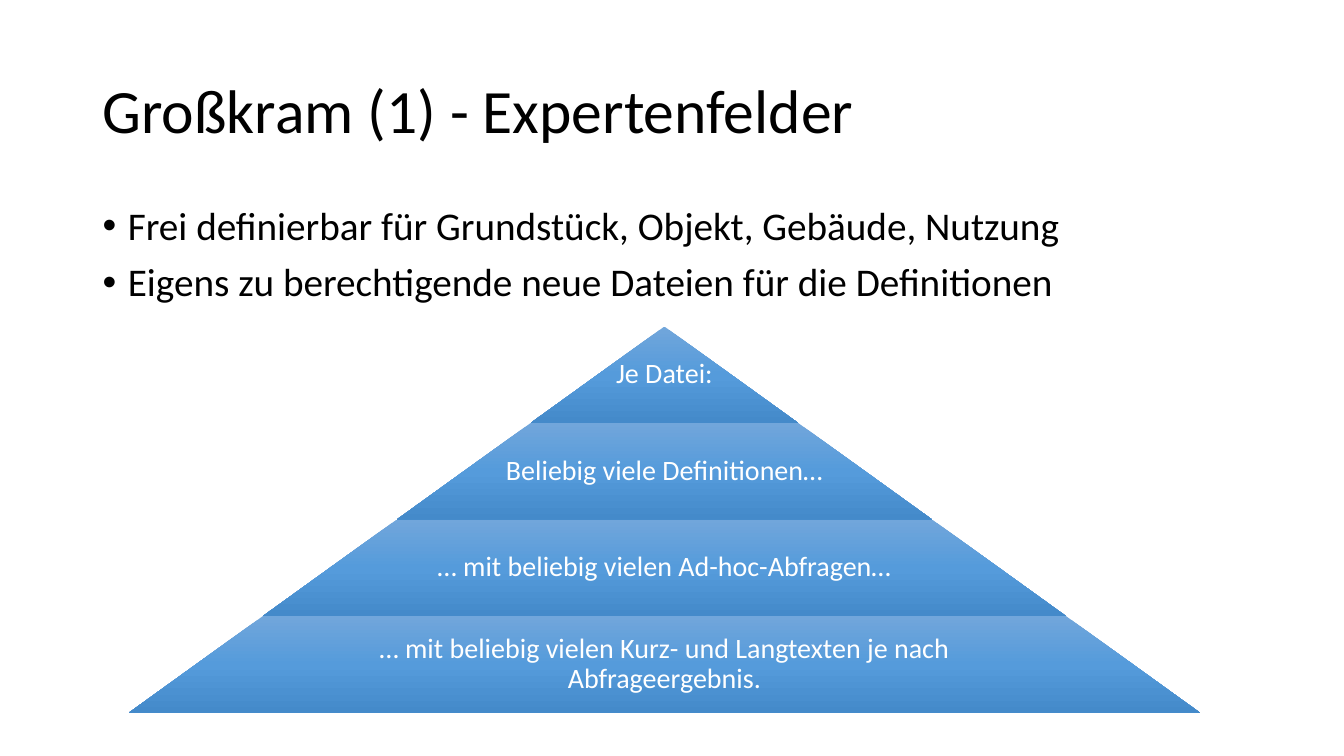
"""Build the slide on expert fields with a four-level pyramid."""
import copy

import pptx
import pptx.dml.color
import pptx.enum.shapes
import pptx.enum.text
import pptx.oxml
import pptx.oxml.ns
import pptx.util

TITLE = "Großkram (1) - Expertenfelder"
BULLETS = [
    "Frei definierbar für Grundstück, Objekt, Gebäude, Nutzung",
    "Eigens zu berechtigende neue Dateien für die Definitionen",
]
LEVELS = [
    "Je Datei:",
    "Beliebig viele Definitionen…",
    "… mit beliebig vielen Ad-hoc-Abfragen…",
    "… mit beliebig vielen Kurz- und Langtexten je nach Abfrageergebnis.",
]
COLORS = {"text": "000000", "label": "FFFFFF",
          "light": "71A6DB", "middle": "559BDB", "dark": "448ACA"}
GRADIENT = [(0, "light"), (0.5, "middle"), (1, "dark")]

PX = 9144
SLIDE_SIZE = (1333, 750)
TITLE_BOX = (92, 40, 1150, 145)
BODY_BOX = (92, 200, 1150, 476)
PYRAMID = {"center": 659, "top": 324, "width": 1062, "height": 383}
LABEL_SHARE = 0.65
LABEL_INSET = 3
BULLET_INDENT = 25

ANCHOR = pptx.enum.text.MSO_ANCHOR
ALIGN = pptx.enum.text.PP_ALIGN


def rgb(name):
    return pptx.dml.color.RGBColor.from_string(COLORS[name])


def emu(box):
    return [pptx.util.Emu(round(length * PX)) for length in box]


def add_bullet(paragraph):
    properties = paragraph._p.get_or_add_pPr()
    properties.set("marL", str(BULLET_INDENT * PX))
    properties.set("indent", str(-BULLET_INDENT * PX))
    namespace = pptx.oxml.ns.nsdecls("a")
    for xml in (f'<a:buFont {namespace} typeface="Arial"/>',
                f'<a:buChar {namespace} char="•"/>'):
        properties.append(pptx.oxml.parse_xml(xml))


def add_text(slide, box, lines, size, color, anchor,
             align=ALIGN.LEFT, bullets=False, inset=None):
    frame = slide.shapes.add_textbox(*emu(box)).text_frame
    frame.word_wrap = True
    frame.vertical_anchor = anchor
    if inset is not None:
        for side in ("left", "top", "right", "bottom"):
            setattr(frame, f"margin_{side}", inset * PX)
    for index, line in enumerate(lines):
        paragraph = frame.add_paragraph() if index else frame.paragraphs[0]
        paragraph.text = line
        paragraph.alignment = align
        paragraph.line_spacing = 0.9
        paragraph.space_before = pptx.util.Pt(10 if index else 0)
        if bullets:
            add_bullet(paragraph)
        font = paragraph.runs[0].font
        for name, value in {"name": "Calibri", "size": pptx.util.Pt(size)}.items():
            setattr(font, name, value)
        font.color.rgb = rgb(color)


def fill_gradient(shape):
    shape.fill.gradient()
    shape.fill.gradient_angle = 270
    stop_list = shape._element.spPr.find(".//" + pptx.oxml.ns.qn("a:gsLst"))
    stop_list.insert(1, copy.deepcopy(stop_list[0]))
    for stop, (position, color) in zip(shape.fill.gradient_stops, GRADIENT):
        stop.position = position
        stop.color.rgb = rgb(color)


def add_pyramid(slide):
    count = len(LEVELS)
    center, height = PYRAMID["center"], PYRAMID["height"] / count
    step = PYRAMID["width"] / count
    for index, label in enumerate(LEVELS):
        width = step * (index + 1)
        top = PYRAMID["top"] + height * index
        level = slide.shapes.add_shape(
            pptx.enum.shapes.MSO_SHAPE.TRAPEZOID,
            *emu((center - width / 2, top, width, height)))
        level.adjustments[0] = step / 2 / height
        level.shadow.inherit = False
        level.line.fill.background()
        fill_gradient(level)
        label_width = width * LABEL_SHARE if index else width
        add_text(slide, (center - label_width / 2, top, label_width, height),
                 [label], 20, "label", ANCHOR.MIDDLE,
                 align=ALIGN.CENTER, inset=LABEL_INSET)


def main():
    presentation = pptx.Presentation()
    presentation.slide_width, presentation.slide_height = emu(SLIDE_SIZE)
    slide = presentation.slides.add_slide(presentation.slide_layouts[6])
    add_text(slide, TITLE_BOX, [TITLE], 44, "text", ANCHOR.MIDDLE)
    add_text(slide, BODY_BOX, BULLETS, 28, "text", ANCHOR.TOP, bullets=True)
    add_pyramid(slide)
    presentation.save("out.pptx")


if __name__ == "__main__":
    main()
